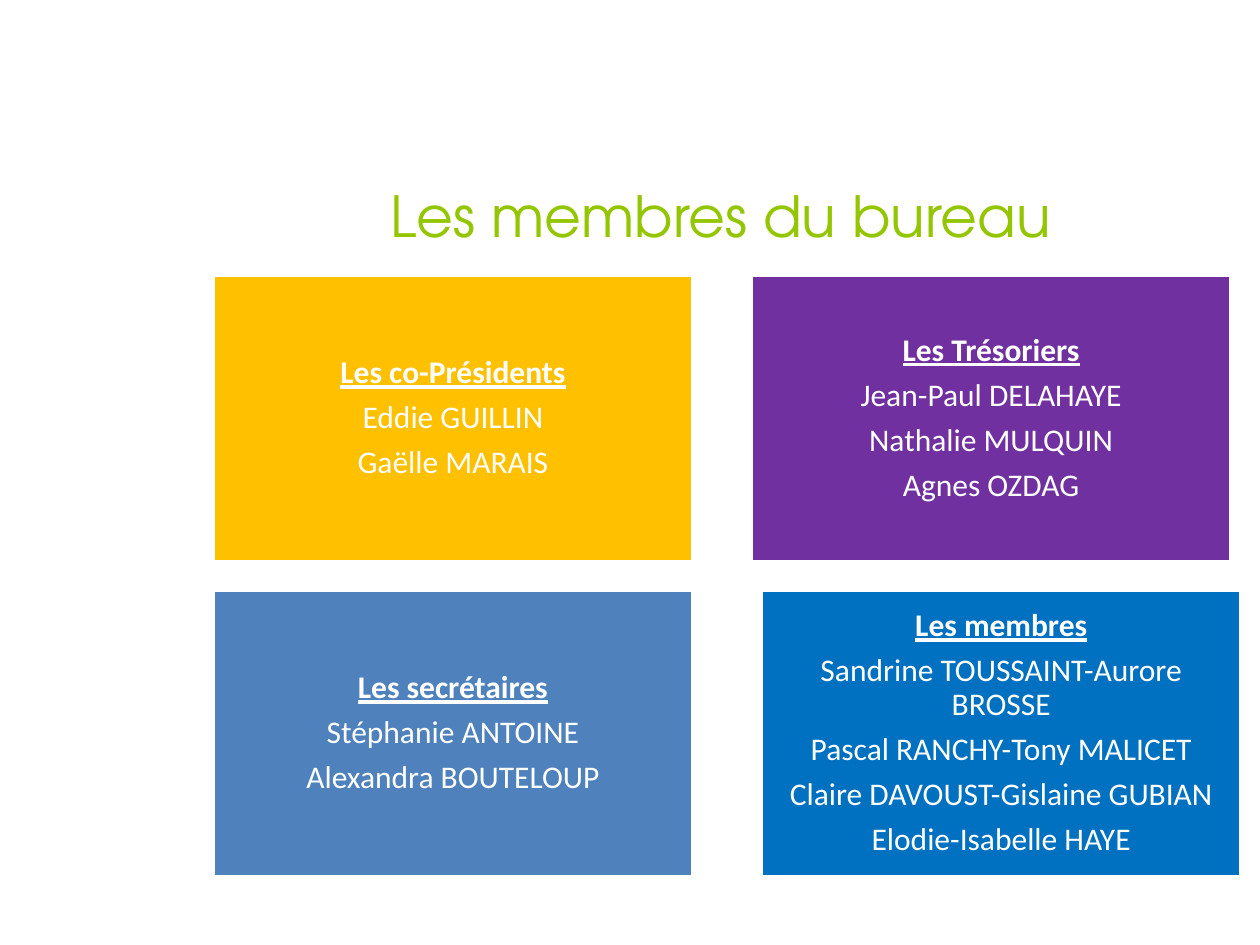
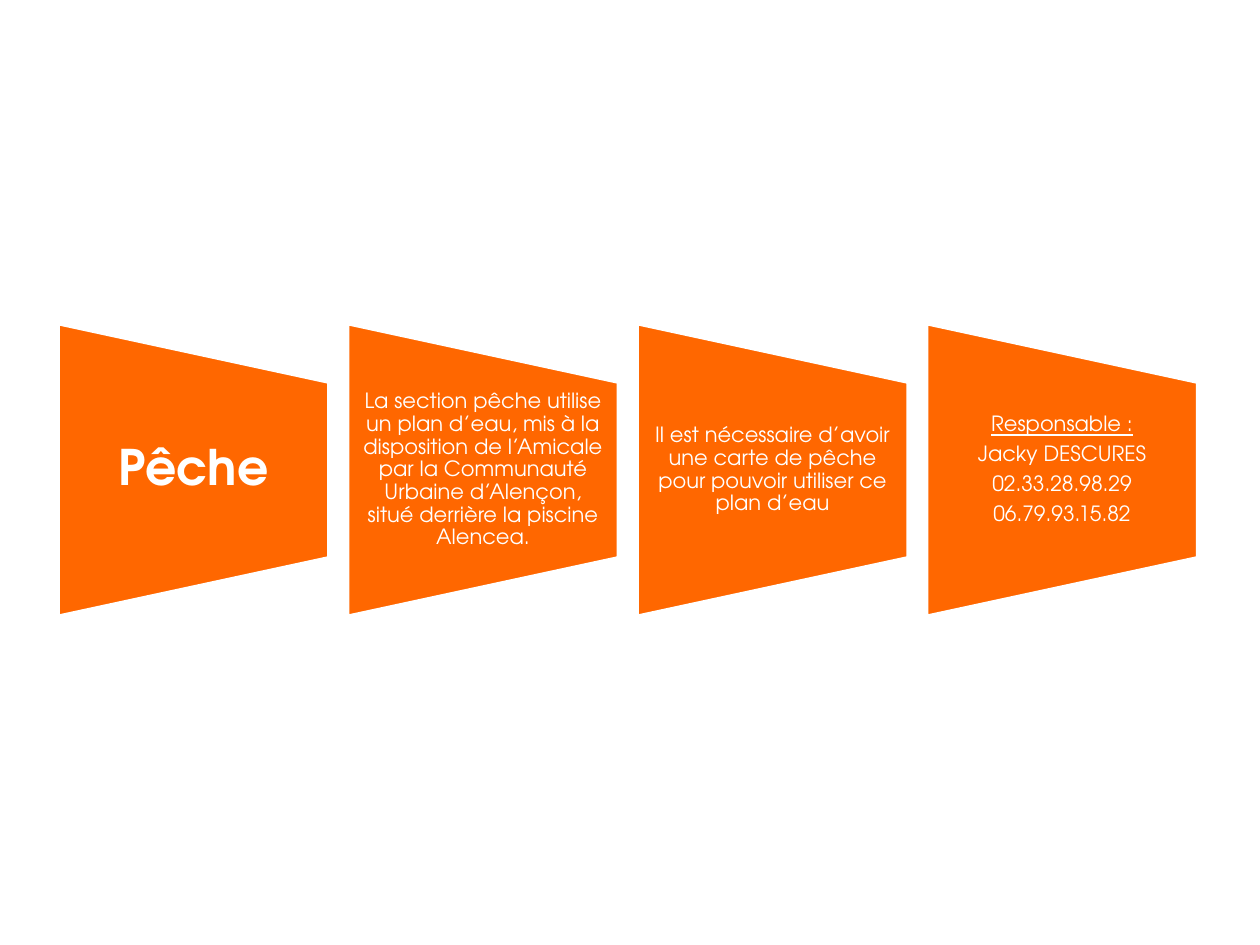
from pptx import Presentation
from pptx.dml.color import RGBColor
from pptx.enum.shapes import MSO_SHAPE as Shape
from pptx.enum.text import MSO_ANCHOR as Anchor, PP_ALIGN as Align
from pptx.util import Pt

WHITE = RGBColor(0xFF, 0xFF, 0xFF)
LIME = RGBColor(0x94, 0xC6, 0x00)
GOLD = RGBColor(0xFF, 0xC0, 0x00)
PURPLE = RGBColor(0x70, 0x30, 0xA0)
STEEL = RGBColor(0x4F, 0x81, 0xBD)
BLUE = RGBColor(0x00, 0x70, 0xC0)
ORANGE = RGBColor(0xFF, 0x67, 0x00)

ROUND = "TeX Gyre Adventor"
PLAIN = "Calibri"
HEAD = {"bold": True, "underline": True}

# Heading, names, colour and sideways shift, row by row
TEAMS = [
    ("Les co-Présidents", ["Eddie GUILLIN", "Gaëlle MARAIS"], GOLD, 0),
    ("Les Trésoriers",
     ["Jean-Paul DELAHAYE", "Nathalie MULQUIN", "Agnes OZDAG"], PURPLE, 0),
    ("Les secrétaires", ["Stéphanie ANTOINE", "Alexandra BOUTELOUP"], STEEL, 0),
    ("Les membres",
     ["Sandrine TOUSSAINT-Aurore BROSSE", "Pascal RANCHY-Tony MALICET",
      "Claire DAVOUST-Gislaine GUBIAN", "Elodie-Isabelle HAYE"], BLUE, 5.8),
]

# Lines, size, side inset and format of the first line
STEPS = [
    (["Pêche"], 28, 14, {"bold": True}),
    (["La section pêche utilise un plan d’eau, mis à la disposition de "
      "l’Amicale par la Communauté Urbaine d’Alençon, situé derrière la "
      "piscine Alencea."], 12, 6, {}),
    (["Il est nécessaire d’avoir une carte de pêche pour pouvoir utiliser "
      "ce plan d’eau"], 12, 6, {}),
    (["Responsable :", "Jacky DESCURES", "02.33.28.98.29", "06.79.93.15.82"],
     12, 6, {"underline": True}),
]


def assign(item, values):
    for name, value in values.items():
        setattr(item, name, value)


def write(shape, lines, font, size, color=WHITE, first=None, pad=(7.2, 3.6)):
    """Fill a shape with centred lines; `first` formats the first one."""
    side, edge = map(Pt, pad)
    frame = shape.text_frame
    assign(frame, {"word_wrap": True, "vertical_anchor": Anchor.MIDDLE,
                   "margin_left": side, "margin_right": side,
                   "margin_top": edge, "margin_bottom": edge})
    for i, line in enumerate(lines):
        para = frame.add_paragraph() if i else frame.paragraphs[0]
        assign(para, {"alignment": Align.CENTER, "line_spacing": 0.9,
                      "space_after": Pt(round(0.35 * size, 2))})
        run = para.add_run()
        run.text = line
        run.font.color.rgb = color
        assign(run.font, {"name": font, "size": Pt(size)})
        if i == 0:
            assign(run.font, first or {})


def block(slide, kind, box, fill, width):
    """Draw a filled shape with a white outline."""
    shape = slide.shapes.add_shape(kind, *map(Pt, box))
    shape.shadow.inherit = False
    shape.fill.solid()
    shape.fill.fore_color.rgb = fill
    shape.line.color.rgb = WHITE
    shape.line.width = Pt(width)
    return shape


def label(slide, box):
    return slide.shapes.add_textbox(*map(Pt, box))


def title(slide, text, box):
    write(label(slide, box), [text], ROUND, 32.4, LIME)


def board(slide, box):
    """Two by two grid of teams."""
    left, top, width, height = box
    wide, high = 274.3, 164.2
    for i, (head, names, fill, shift) in enumerate(TEAMS):
        row, col = divmod(i, 2)
        x = left + col * (width - wide) + shift
        y = top + row * (height - high)
        card = block(slide, Shape.RECTANGLE, (x, y, wide, high), fill, 2)
        write(card, [head, *names], PLAIN, 18, first=HEAD, pad=(5, 5))


def chain(slide, box):
    """Row of trapezoids that narrow to the right."""
    left, top, width, height = box
    wide = 154
    pitch = (width - wide) / (len(STEPS) - 1)
    turn = (height - wide) / 2
    for i, (lines, size, side, first) in enumerate(STEPS):
        x = left + i * pitch
        # A quarter turn swaps width and height around the same centre
        flag = block(slide, Shape.FLOWCHART_MANUAL_OPERATION,
                     (x - turn, top + turn, height, wide), ORANGE, 1.25)
        flag.rotation = 270
        text = label(slide, (x, top + height / 5, wide, height * 3 / 5))
        write(text, lines, ROUND, size, first=first, pad=(side, 0))


def main():
    deck = Presentation()
    assign(deck, {"slide_width": Pt(720), "slide_height": Pt(540)})
    blank = deck.slide_layouts[6]

    # Committee
    office = deck.slides.add_slide(blank)
    title(office, "Les membres du bureau", (87.8, 100, 648, 50.4))
    board(office, (121.7, 157, 581.8, 344.2))

    # Fishing section
    fishing = deck.slides.add_slide(blank)
    chain(fishing, (33.6, 185.4, 650.3, 166.3))

    deck.save("out.pptx")


if __name__ == "__main__":
    main()
